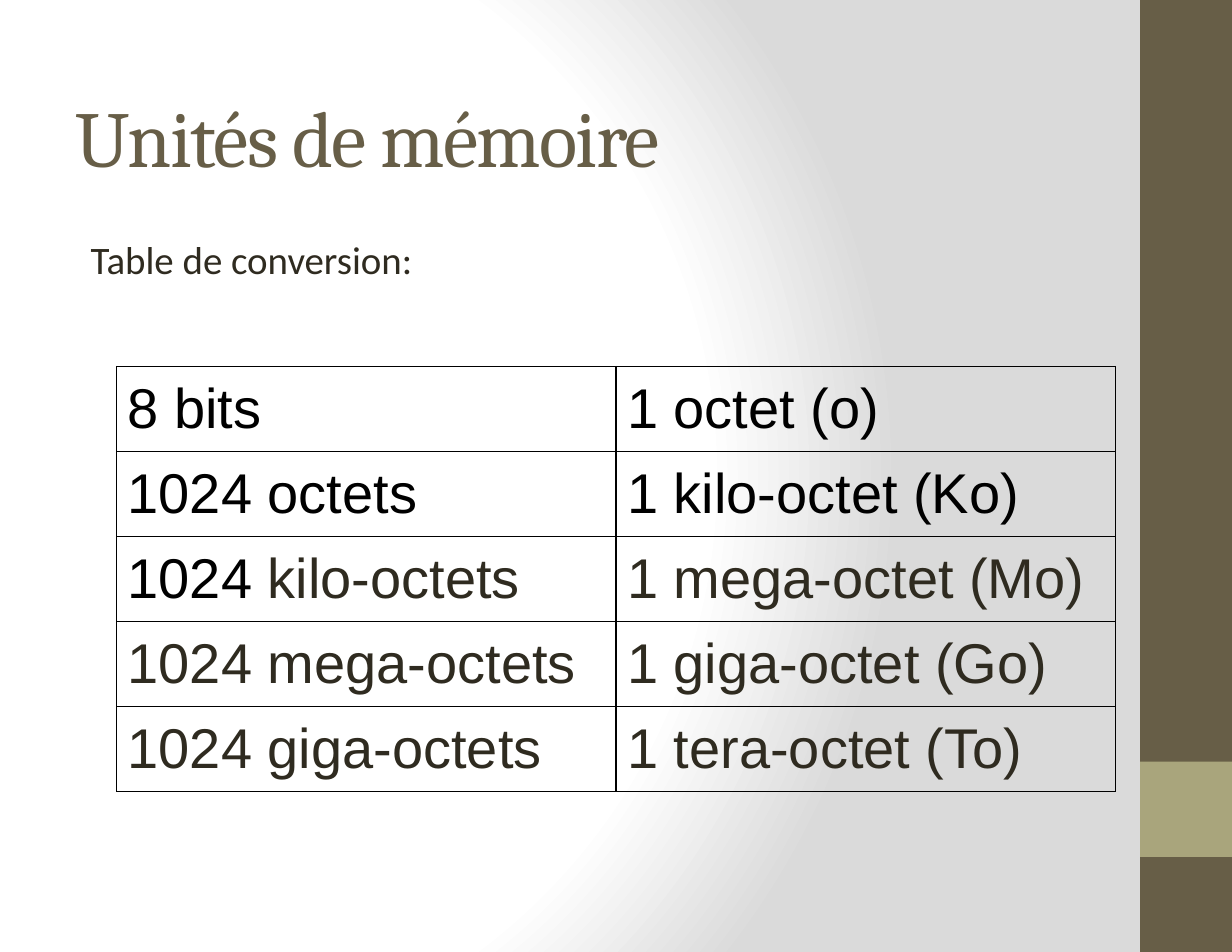
from lxml import etree
from pptx import Presentation
from pptx.dml.color import RGBColor
from pptx.enum import shapes, text
from pptx.oxml import parse_xml
from pptx.oxml.ns import nsdecls
from pptx.util import Inches, Pt

BROWN = RGBColor(0x67, 0x5E, 0x47)
OLIVE = RGBColor(0xA9, 0xA5, 0x7C)
DARK = RGBColor(0x2F, 0x2B, 0x20)
BLACK = RGBColor(0, 0, 0)
INSET = Inches(0.12)

# Each cell is a list of (text, colour) runs
CONVERSIONS = [
    ([("8 bits", BLACK)], [("1 octet (o)", BLACK)]),
    ([("1024 octets", BLACK)], [("1 kilo-octet (Ko)", BLACK)]),
    ([("1024 ", BLACK), ("kilo-octets", DARK)], [("1 mega-octet (Mo)", DARK)]),
    ([("1024 mega-octets", DARK)], [("1 giga-octet (Go)", DARK)]),
    ([("1024 giga-octets", DARK)], [("1 tera-octet (To)", DARK)]),
]


def set_font(font, name, size, color):
    font.name, font.size, font.color.rgb = name, Pt(size), color


def paint_background(slide):
    """Radial gradient, white on the left to grey on the right."""
    slide.background.fill.solid()
    solid = slide.background.fill._xPr.find(".//{*}solidFill")
    stops = "".join(
        f'<a:gs pos="{pos}"><a:srgbClr val="{color}"/></a:gs>'
        for pos, color in ((0, "FFFFFF"), (75000, "FFFFFF"), (100000, "DADADA"))
    )
    gradient = parse_xml(
        f'<a:gradFill {nsdecls("a")} rotWithShape="1"><a:gsLst>{stops}</a:gsLst>'
        '<a:path path="circle">'
        '<a:fillToRect l="20000" t="50000" r="100000" b="50000"/>'
        "</a:path></a:gradFill>"
    )
    solid.getparent().replace(solid, gradient)


def add_side_band(slide, left, top, width, height):
    """Brown band with an olive block at four fifths of its height."""
    blocks = ((top, height, BROWN), (top + int(height * 0.8), height // 10, OLIVE))
    for depth, (block_top, block_height, color) in enumerate(blocks):
        block = slide.shapes.add_shape(
            shapes.MSO_SHAPE.RECTANGLE, left, block_top, width, block_height
        )
        block.shadow.inherit = False
        block.fill.solid()
        block.fill.fore_color.rgb = color
        block.line.fill.background()
        # Keep the band behind the text
        slide.shapes._spTree.insert(2 + depth, block._element)


def fill_placeholder(placeholder, box, words, anchor):
    placeholder.left, placeholder.top, placeholder.width, placeholder.height = box
    frame = placeholder.text_frame
    frame.text = words
    frame.word_wrap = True
    frame.auto_size = text.MSO_AUTO_SIZE.NONE
    frame.vertical_anchor = anchor
    frame.margin_left = frame.margin_right = INSET
    frame.margin_top = frame.margin_bottom = INSET
    paragraph = frame.paragraphs[0]
    paragraph.alignment = text.PP_ALIGN.LEFT
    paragraph.space_before = Pt(0)
    return paragraph


def add_heading(slide, *box):
    heading = fill_placeholder(
        slide.shapes.title, box, "Unités de mémoire", text.MSO_ANCHOR.BOTTOM
    )
    set_font(heading.font, "Cambria", 51, BROWN)
    # Tighter letter spacing, in hundredths of a point
    heading.runs[0]._r.get_or_add_rPr().set("spc", "-110")


def add_intro(slide, *box):
    intro = fill_placeholder(
        slide.placeholders[1], box, "Table de conversion:", text.MSO_ANCHOR.TOP
    )
    set_font(intro.font, "Calibri", 25, DARK)
    # Hanging indent without a bullet
    properties = intro._p.get_or_add_pPr()
    properties.set("marL", str(Inches(0.42)))
    properties.set("indent", str(Inches(-0.28)))
    properties.insert_element_before(
        parse_xml(f'<a:buNone {nsdecls("a")}/>'), "a:tabLst", "a:defRPr", "a:extLst"
    )


def outline_cell(cell):
    properties = cell._tc.get_or_add_tcPr()
    for position, side in enumerate(("lnL", "lnR", "lnT", "lnB")):
        border = parse_xml(
            f'<a:{side} {nsdecls("a")} w="{Pt(0.75)}"><a:solidFill>'
            f'<a:srgbClr val="{BLACK}"/></a:solidFill></a:{side}>'
        )
        properties.insert(position, border)


def fill_cell(cell, parts):
    cell.fill.background()
    cell.margin_left = cell.margin_right = Inches(0.1)
    cell.margin_top = cell.margin_bottom = Inches(0.1)
    outline_cell(cell)
    paragraph = cell.text_frame.paragraphs[0]
    set_font(paragraph.font, "Arial", 36, parts[0][1])
    for words, color in parts:
        run = paragraph.add_run()
        run.text = words
        if color != parts[0][1]:
            run.font.color.rgb = color


def add_conversions(slide, left, top, width, height):
    table = slide.shapes.add_table(
        len(CONVERSIONS), 2, left, top, width, height
    ).table
    table.first_row = table.horz_banding = False
    for row, conversion in enumerate(CONVERSIONS):
        for column, parts in enumerate(conversion):
            fill_cell(table.cell(row, column), parts)


def main():
    deck = Presentation()
    deck.slide_width, deck.slide_height = Inches(11), Inches(8.5)
    slide = deck.slides.add_slide(deck.slide_layouts[1])
    paint_background(slide)
    add_side_band(slide, Inches(10.18), 0, Inches(0.82), deck.slide_height)
    add_heading(slide, Inches(0.55), Inches(0.34), Inches(9.9), Inches(1.42))
    add_intro(slide, Inches(0.55), Inches(1.98), Inches(9.9), Inches(6.16))
    add_conversions(slide, Inches(1.04), Inches(3.27), Inches(8.92), Inches(3.8))
    deck.save("out.pptx")


if __name__ == "__main__":
    main()
